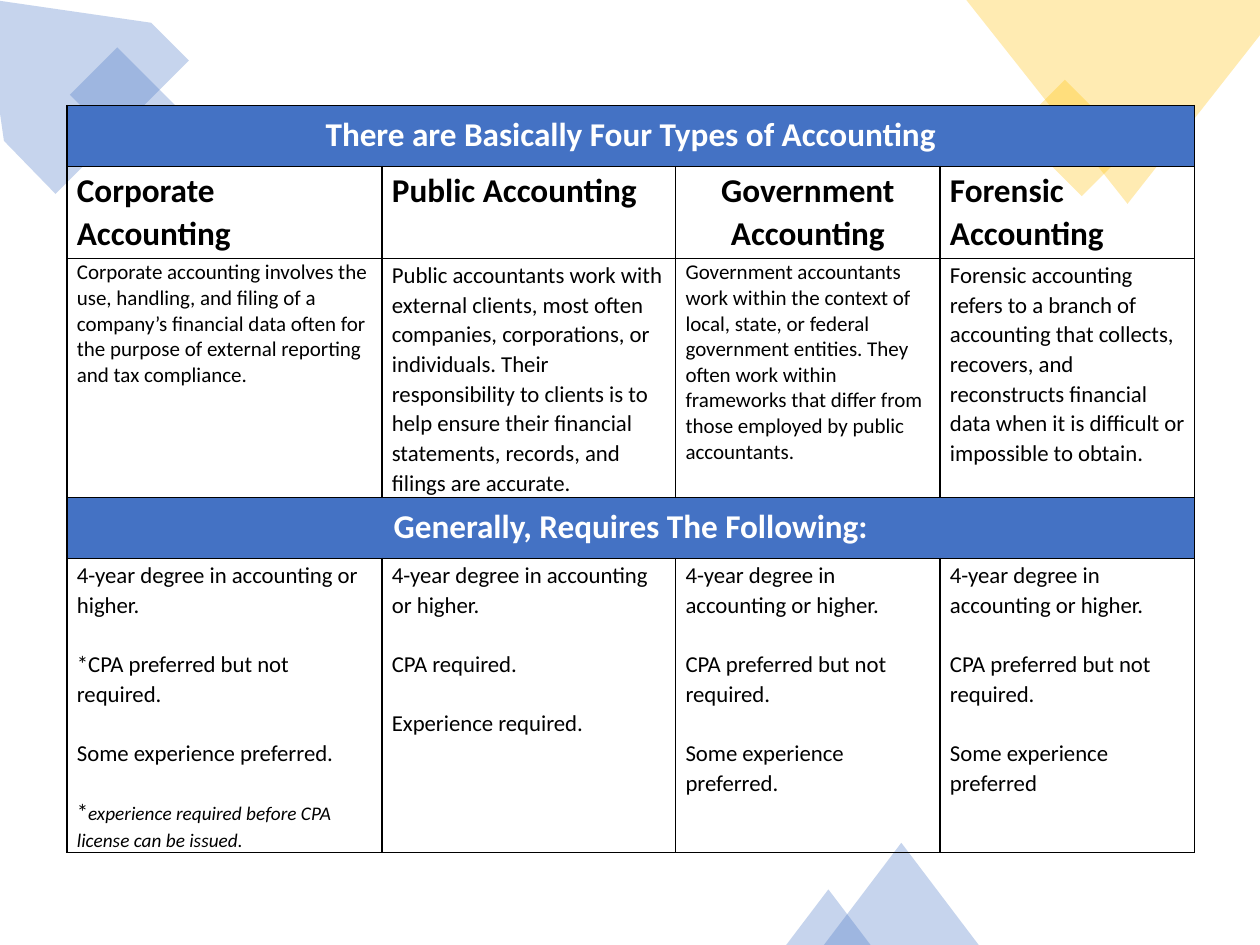
"""Build a slide that compares four types of accounting in a table."""
from dataclasses import dataclass, field
from typing import Any

from lxml.etree import SubElement
from pptx import Presentation
from pptx.dml.color import RGBColor
from pptx.enum.shapes import MSO_SHAPE
from pptx.enum.text import PP_ALIGN
from pptx.oxml.ns import qn
from pptx.util import Cm, Pt

HUES = {"blue": "4472C4", "gold": "FFC000", "white": "FFFFFF", "black": "000000"}
COLS = (6.35, 5.92, 5.33, 5.13)
ROWS = (1.23, 1.85, 4.8, 1.23, 5.93)
BAND = {"margin_left": Cm(0.25), "margin_right": Cm(0.25),
        "margin_top": Cm(0.13), "margin_bottom": Cm(0.13)}
BODY = {"margin_left": Cm(0.2), "margin_right": Cm(0.2),
        "margin_top": Cm(0.03), "margin_bottom": Cm(0)}


@dataclass
class Shard:
    """A preset shape in the backdrop, measured in centimetres."""
    kind: MSO_SHAPE
    box: tuple[float, float, float, float]
    hue: str
    turn: float = 0


@dataclass
class Facet:
    """A free outline in the backdrop, measured in centimetres."""
    dots: list[tuple[float, float]]
    hue: str


@dataclass
class Entry:
    """The text of one table cell and its format."""
    lines: list[str]
    size: float = 13
    bold: bool = False
    hue: str = "black"
    align: PP_ALIGN = PP_ALIGN.LEFT
    pitch: float = 1.07
    note: str = ""
    inset: dict[str, int] = field(default_factory=lambda: BODY)


DECOR = [
    Facet([(3.05, 0.46), (-0.33, -0.03), (0.08, 2.84), (1.12, 3.91), (3.81, 1.22)], "blue"),
    Shard(MSO_SHAPE.RECTANGLE, (1.85, 1.17, 1.35, 1.8), "blue", 315),
    Shard(MSO_SHAPE.RECTANGLE, (20.93, 1.83, 1.42, 1.9), "gold", 315),
    Facet([(25.4, 0), (19.48, 0), (22.73, 4.11), (25.4, 0.71)], "gold"),
    Shard(MSO_SHAPE.ISOSCELES_TRIANGLE, (16.61, 16.99, 3.12, 2.06), "blue"),
    Shard(MSO_SHAPE.ISOSCELES_TRIANGLE, (15.85, 17.93, 1.7, 1.12), "blue"),
]


def band(text: str) -> Entry:
    """Describe a heading that spans the table."""
    return Entry([text], 19, True, "white", PP_ALIGN.CENTER, inset=BAND)


def head(text: str, align: PP_ALIGN = PP_ALIGN.LEFT) -> Entry:
    """Describe a column heading."""
    return Entry([text], 19, True, align=align)


def needs(cpa: str, past: str, note: str = "") -> Entry:
    """Describe the requirements of one field."""
    return Entry(["4-year degree in accounting or higher.", cpa, past], note=note)


GRID = [
    [band("There are Basically Four Types of Accounting")],
    [head("Corporate Accounting"), head("Public Accounting", PP_ALIGN.JUSTIFY),
     head("Government Accounting", PP_ALIGN.CENTER), head("Forensic Accounting")],
    [Entry(["Corporate accounting involves the use, handling, and filing of a company’s "
            "financial data often for the purpose of external reporting and tax "
            "compliance."], 12, pitch=1.0),
     Entry(["Public accountants work with external clients, most often companies, "
            "corporations, or individuals. Their responsibility to clients is to help "
            "ensure their financial statements, records, and filings are accurate."]),
     Entry(["Government accountants work within the context of local, state, or federal "
            "government entities. They often work within frameworks that differ from "
            "those employed by public accountants."], 12, pitch=1.0),
     Entry(["Forensic accounting refers to a branch of accounting that collects, "
            "recovers, and reconstructs financial data when it is difficult or "
            "impossible to obtain."])],
    [band("Generally, Requires The Following:")],
    [needs("*CPA preferred but not required.", "Some experience preferred.",
           "experience required before CPA license can be issued."),
     needs("CPA required.", "Experience required."),
     needs("CPA preferred but not required.", "Some experience preferred."),
     needs("CPA preferred but not required.", "Some experience preferred")],
]


def apply(item: Any, form: dict[str, Any]) -> None:
    """Set each attribute named in the format."""
    for name, value in form.items():
        setattr(item, name, value)


def tint(shape: Any, hue: str) -> None:
    """Give a backdrop shape a sheer fill and no line."""
    shape.shadow.inherit = False
    shape.line.fill.background()
    shape.fill.solid()
    shape.fill.fore_color.rgb = RGBColor.from_string(HUES[hue])
    for mark in shape._element.spPr.iter(qn("a:srgbClr")):
        SubElement(mark, qn("a:alpha"), val="30000")


def draw_shard(shapes: Any, shard: Shard) -> None:
    """Draw a preset shape."""
    shape = shapes.add_shape(shard.kind, *map(Cm, shard.box))
    shape.rotation = shard.turn
    tint(shape, shard.hue)


def draw_facet(shapes: Any, facet: Facet) -> None:
    """Draw a free outline."""
    dots = [(Cm(x), Cm(y)) for x, y in facet.dots]
    pen = shapes.build_freeform(*dots[0])
    pen.add_line_segments(dots[1:], close=True)
    tint(pen.convert_to_shape(), facet.hue)


def frame(cell: Any) -> None:
    """Rule all four sides of a cell."""
    props = cell._tc.get_or_add_tcPr()
    for side in ("lnL", "lnR", "lnT", "lnB"):
        line = SubElement(props, qn(f"a:{side}"), w=str(Pt(1)))
        fill = SubElement(line, qn("a:solidFill"))
        SubElement(fill, qn("a:srgbClr"), val=HUES["black"])


def add_run(para: Any, text: str, entry: Entry, **extra: Any) -> None:
    """Add a run in the format of its entry."""
    run = para.add_run()
    run.text = text
    form = {"name": "Calibri", "size": Pt(entry.size), "bold": entry.bold}
    apply(run.font, form | extra)
    run.font.color.rgb = RGBColor.from_string(HUES[entry.hue])


def write(cell: Any, entry: Entry) -> None:
    """Write an entry into its cell."""
    apply(cell, entry.inset)
    lines = entry.lines + (["*"] if entry.note else [])
    for spot, text in enumerate(lines):
        para = cell.text_frame.add_paragraph() if spot else cell.text_frame.paragraphs[0]
        apply(para, {"alignment": entry.align, "line_spacing": entry.pitch,
                     "space_before": Pt(17 if spot else 0)})
        add_run(para, text, entry)
    if entry.note:
        add_run(para, entry.note, entry, size=Pt(11), italic=True)


def draw_table(shapes: Any) -> None:
    """Draw the table of accounting types."""
    table = shapes.add_table(len(ROWS), len(COLS), Cm(1.35), Cm(2.13),
                             Cm(sum(COLS)), Cm(sum(ROWS))).table
    apply(table, {"first_row": False, "horz_banding": False})
    for col, width in zip(table.columns, COLS):
        col.width = Cm(width)
    for row, height, items in zip(table.rows, ROWS, GRID):
        row.height = Cm(height)
        cells = list(row.cells)
        wide = len(items) == 1
        for cell in cells:
            frame(cell)
            if wide:
                cell.fill.solid()
                cell.fill.fore_color.rgb = RGBColor.from_string(HUES["blue"])
            else:
                cell.fill.background()
        if wide:
            cells[0].merge(cells[-1])
        for cell, entry in zip(cells, items):
            write(cell, entry)


def main() -> None:
    """Build and save the slide."""
    deck = Presentation()
    apply(deck, {"slide_width": Cm(25.4), "slide_height": Cm(19.05)})
    shapes = deck.slides.add_slide(deck.slide_layouts[6]).shapes
    for part in DECOR:
        draw = draw_shard if isinstance(part, Shard) else draw_facet
        draw(shapes, part)
    draw_table(shapes)
    deck.save("out.pptx")


if __name__ == "__main__":
    main()
